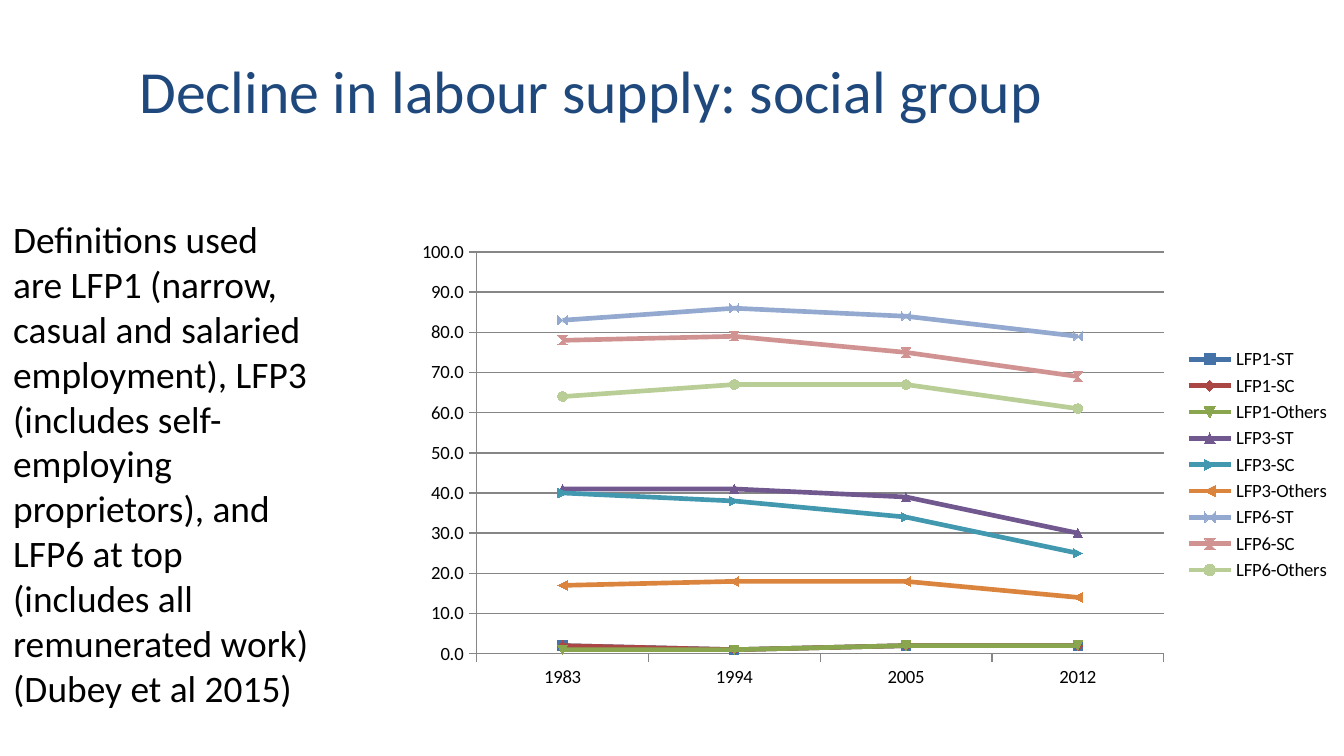
from pptx import Presentation
from pptx.chart.data import CategoryChartData
from pptx.dml.color import RGBColor
from pptx.enum.chart import XL_CHART_TYPE, XL_LEGEND_POSITION, XL_TICK_MARK
from pptx.enum.text import MSO_ANCHOR, MSO_AUTO_SIZE, PP_ALIGN
from pptx.util import Cm, Pt

LINE = XL_CHART_TYPE.LINE_MARKERS
RIGHT = XL_LEGEND_POSITION.RIGHT
OUT, NONE = XL_TICK_MARK.OUTSIDE, XL_TICK_MARK.NONE
MIDDLE, CENTER = MSO_ANCHOR.MIDDLE, PP_ALIGN.CENTER
GROW = MSO_AUTO_SIZE.SHAPE_TO_FIT_TEXT

COLORS = {
    "title": "1F497D", "text": "000000", "grid": "868686",
    "LFP1-ST": "4572A7", "LFP1-SC": "AA4643", "LFP1-Others": "89A54E",
    "LFP3-ST": "71588F", "LFP3-SC": "4198AF", "LFP3-Others": "DB843D",
    "LFP6-ST": "93A9CF", "LFP6-SC": "D19392", "LFP6-Others": "B9CD96",
}
RATES = {
    "LFP1-ST": (2, 1, 2, 2),
    "LFP1-SC": (2, 1, 2, 2),
    "LFP1-Others": (1, 1, 2, 2),
    "LFP3-ST": (41, 41, 39, 30),
    "LFP3-SC": (40, 38, 34, 25),
    "LFP3-Others": (17, 18, 18, 14),
    "LFP6-ST": (83, 86, 84, 79),
    "LFP6-SC": (78, 79, 75, 69),
    "LFP6-Others": (64, 67, 67, 61),
}
NOTES = [
    "Definitions used are LFP1 (narrow, casual and salaried employment), "
    "LFP3 (includes self-employing proprietors), and LFP6 at top "
    "(includes all remunerated work)",
    "(Dubey et al 2015)",
]


def put(item, values):
    for key, value in values.items():
        setattr(item, key, value)


def style(font, size, color):
    put(font, {"name": "Calibri", "size": Pt(size), "bold": False})
    font.color.rgb = RGBColor.from_string(COLORS[color])


deck = Presentation()
put(deck, {"slide_width": Cm(25.4), "slide_height": Cm(14.29)})
slide = deck.slides.add_slide(deck.slide_layouts[5])

title = slide.shapes.title
put(title, {"left": Cm(0), "top": Cm(0.98), "width": Cm(22.35), "height": Cm(1.43)})
put(title.text_frame, {"text": "Decline in labour supply: social group",
                       "vertical_anchor": MIDDLE, "word_wrap": True})
head = title.text_frame.paragraphs[0]
head.alignment = CENTER
style(head.runs[0].font, 32, "title")

box = slide.shapes.add_textbox(Cm(0), Cm(3.97), Cm(6.15), Cm(9.65))
put(box.text_frame, {"text": "\n".join(NOTES), "word_wrap": True,
                     "auto_size": GROW})
for para in box.text_frame.paragraphs:
    style(para.runs[0].font, 20, "text")

data = CategoryChartData(number_format="0.0")
data.categories = ["1983", "1994", "2005", "2012"]
for name, rates in RATES.items():
    data.add_series(name, rates)
chart = slide.shapes.add_chart(
    LINE, Cm(7.62), Cm(4.39), Cm(17.78), Cm(8.79), data).chart
put(chart, {"has_title": False, "has_legend": True})
style(chart.font, 10, "text")
put(chart.legend, {"position": RIGHT, "include_in_layout": False})

years, scale = chart.category_axis, chart.value_axis
put(scale, {"minimum_scale": 0, "maximum_scale": 100, "major_unit": 10,
            "has_major_gridlines": True})
put(scale.tick_labels, {"number_format": "0.0",
                        "number_format_is_linked": False})
for axis in (years, scale):
    put(axis, {"major_tick_mark": OUT, "minor_tick_mark": NONE})
for part in (years, scale, scale.major_gridlines):
    part.format.line.width = Pt(0.75)
    part.format.line.color.rgb = RGBColor.from_string(COLORS["grid"])

for line in chart.plots[0].series:
    color = RGBColor.from_string(COLORS[line.name])
    line.smooth = False
    line.format.line.width = Pt(2.5)
    line.format.line.color.rgb = color
    line.marker.size = 5
    line.marker.format.fill.solid()
    line.marker.format.fill.fore_color.rgb = color
    line.marker.format.line.color.rgb = color

deck.save("out.pptx")
